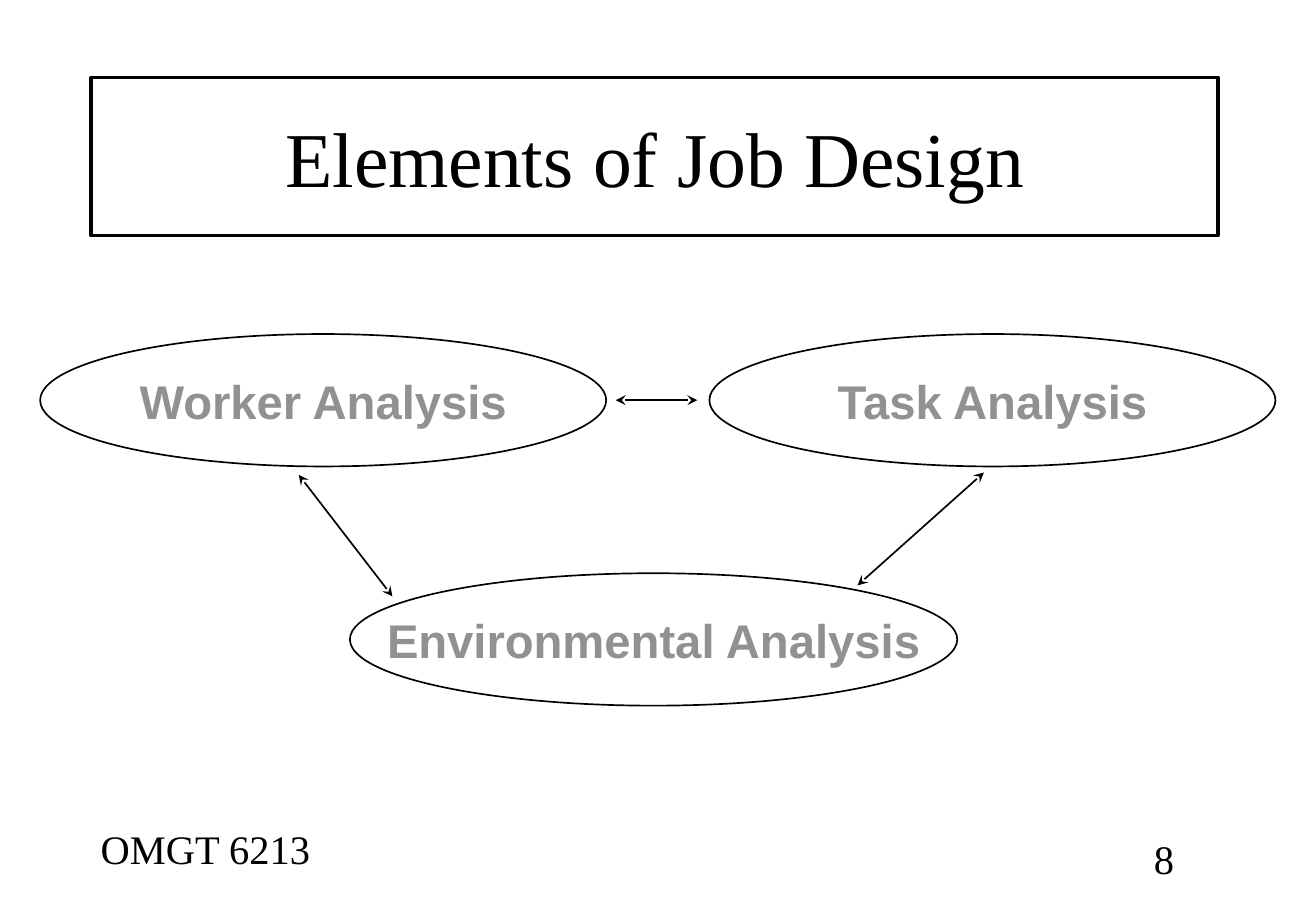
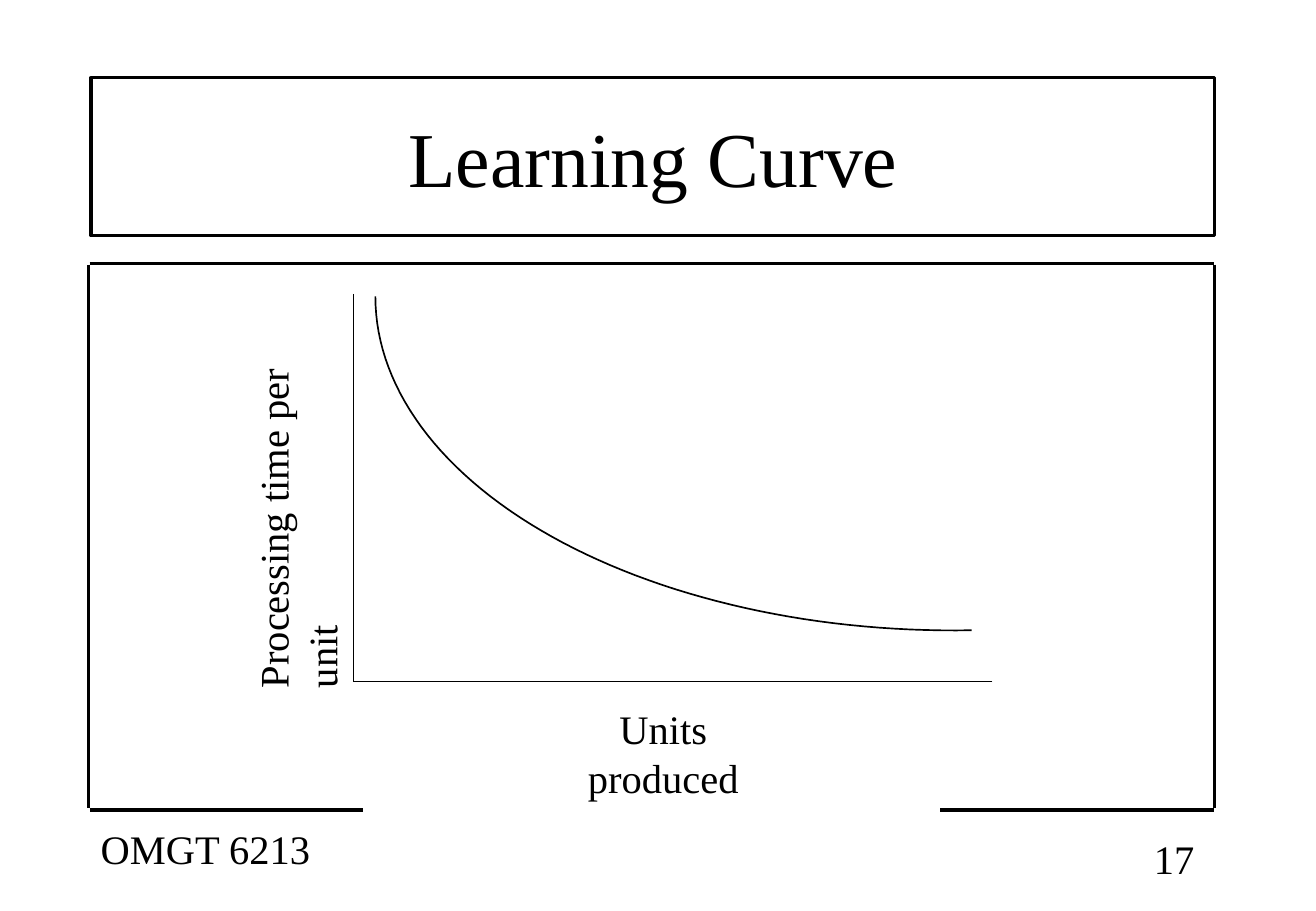
from math import cos, sin, pi
from pptx import Presentation
from pptx.dml.color import RGBColor
from pptx.enum.shapes import MSO_CONNECTOR, MSO_SHAPE
from pptx.enum.text import MSO_ANCHOR, MSO_AUTO_SIZE, PP_ALIGN
from pptx.oxml.ns import qn
from pptx.util import Pt
from lxml.etree import SubElement

COLORS = {"ink": "000000", "paper": "FFFFFF", "label": "919191"}
SERIF, SANS = "Times New Roman", "Arial"
FRAME = (52.5, 156.2, 667.5, 324)


def color(name):
    return RGBColor.from_string(COLORS[name])


def box(x, y, w, h):
    return Pt(x), Pt(y), Pt(w), Pt(h)


def outline(shape, width):
    shape.fill.background()
    shape.line.color.rgb = color("ink")
    shape.line.width = Pt(width)


def write(shape, text, size, font=SERIF, tone="ink", bold=False,
          align=PP_ALIGN.LEFT, anchor=MSO_ANCHOR.TOP, wrap=True):
    frame = shape.text_frame
    frame.word_wrap = wrap
    frame.auto_size = MSO_AUTO_SIZE.NONE
    frame.vertical_anchor = anchor
    para = frame.paragraphs[0]
    para.alignment = align
    run = para.add_run()
    run.text = text
    run.font.name = font
    run.font.size = Pt(size)
    run.font.bold = bold
    run.font.color.rgb = color(tone)


def label(slide, area, text, **style):
    shape = slide.shapes.add_textbox(*box(*area))
    write(shape, text, 24, **style)
    return shape


def rule(slide, start, end, width=1, tone="ink", arrows=False):
    line = slide.shapes.add_connector(
        MSO_CONNECTOR.STRAIGHT, *(Pt(v) for v in (*start, *end)))
    line.line.color.rgb = color(tone)
    line.line.width = Pt(width)
    props = line._element.spPr
    if arrows:
        for tag in ("a:headEnd", "a:tailEnd"):
            SubElement(props.find(qn("a:ln")), qn(tag), type="stealth")
    SubElement(props, qn("a:effectLst"))


def panel(slide, area, tone="ink"):
    x, y, w, h = area
    gap, stub = 0.7, 162
    left, right = x + gap, x + w - gap
    top, base = y + gap, y + h - 1.4
    edges = [
        ((left, y), (right, y)),
        ((x, top), (x, base)),
        ((x + w, top), (x + w, base)),
        ((left, y + h), (left + stub, y + h)),
        ((right - stub, y + h), (right, y + h)),
    ]
    for start, end in edges:
        rule(slide, start, end, 2, tone)


def page(deck, title, number, width):
    slide = deck.slides.add_slide(deck.slide_layouts[5])
    panel(slide, FRAME)
    label(slide, (676.8, 491, 42.5, 36), number, wrap=False)
    label(slide, (52.5, 484.8, 140, 36), "OMGT 6213", wrap=False)
    head = slide.shapes.title
    head.left, head.top, head.width, head.height = box(54, 46, width, 93.6)
    outline(head, 2)
    write(head, title, 46, align=PP_ALIGN.CENTER, anchor=MSO_ANCHOR.MIDDLE)
    return slide


def cycle(slide, area):
    x, y, w, h = area
    tall, wide, base = 78.5, 335.5, 360
    ovals = [
        ("Task Analysis", w - wide, 0, wide),
        ("Worker Analysis", 0, 0, wide),
        ("Environmental Analysis", 183.6, h - tall, base),
    ]
    for text, dx, dy, width in ovals:
        oval = slide.shapes.add_shape(
            MSO_SHAPE.OVAL, *box(x + dx, y + dy, width, tall))
        oval.shadow.inherit = False
        outline(oval, 1)
        write(oval, text, 28, SANS, "label", True, PP_ALIGN.CENTER,
              MSO_ANCHOR.MIDDLE, False)
    arrows = [
        ((341.2, tall / 2), (389.5, tall / 2)),
        ((153.3, 83.5), (208.8, 155.5)),
        ((484.5, 149), (559.4, 82.1)),
    ]
    for (ax, ay), (bx, by) in arrows:
        rule(slide, (x + ax, y + ay), (x + bx, y + by), arrows=True)


def curve(slide, area):
    x, y, w, h = area
    name = label(slide, (x - 148.7, y + 93.2, 230.4, 64.8),
                 "Processing time per unit")
    name.rotation = 270
    rule(slide, (x, y), (x, y + h))
    rule(slide, (x + w, y + h), (x, y + h))
    label(slide, (x + 111.6, y + h + 10.1, 144, 64.8), "Units produced",
          align=PP_ALIGN.CENTER)
    rx, ry, steps = 342.7, 198, 60
    mid, top = x + 13 + rx, y + 1.5
    sweep = pi * 0.51
    dots = [(Pt(mid - rx * cos(sweep * i / steps)),
             Pt(top + ry * sin(sweep * i / steps)))
            for i in range(steps + 1)]
    pen = slide.shapes.build_freeform(*dots[0])
    pen.add_line_segments(dots[1:], close=False)
    arc = pen.convert_to_shape()
    arc.shadow.inherit = False
    outline(arc, 1)


def main():
    deck = Presentation()
    deck.slide_width, deck.slide_height = Pt(780), Pt(540)
    slide = page(deck, "Elements of Job Design", "8", 668)
    panel(slide, FRAME, "paper")
    cycle(slide, (23.8, 198, 732.2, 220.3))
    slide = page(deck, "Learning Curve", "17", 666)
    curve(slide, (209.5, 174.2, 378.7, 229.7))
    deck.save("out.pptx")


if __name__ == "__main__":
    main()
